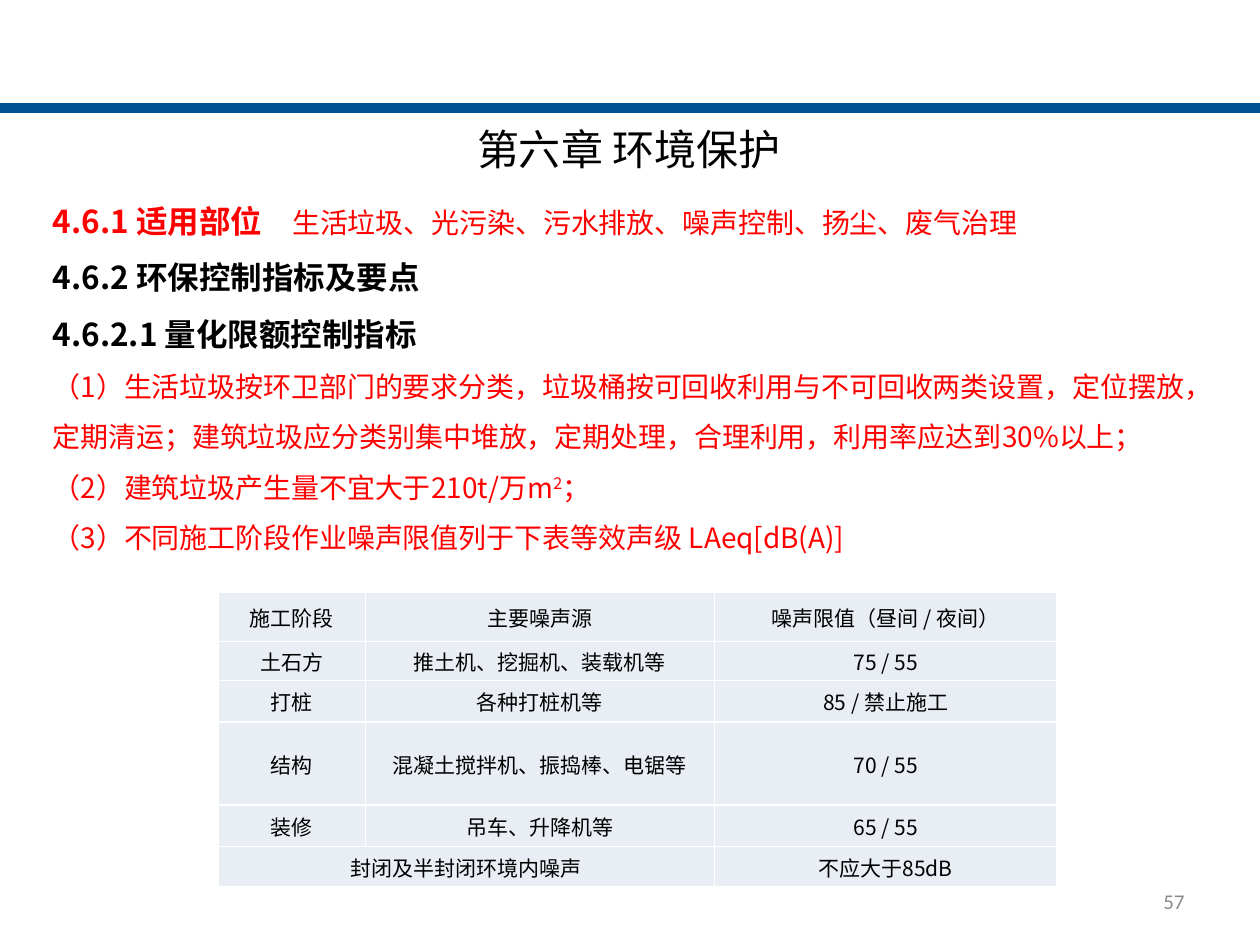
from lxml.etree import SubElement
from pptx import Presentation
from pptx.dml.color import RGBColor as RGB
from pptx.enum.shapes import MSO_SHAPE as Shape
from pptx.enum.text import MSO_ANCHOR as Anchor, PP_ALIGN as Align
from pptx.oxml import parse_xml
from pptx.oxml.ns import nsdecls, qn
from pptx.util import Emu, Inches, Pt

# Content
COLORS = {"bar": "005292", "red": "FF0000", "black": "000000",
          "grey": "8C8C8C", "cell": "E9EDF4", "white": "FFFFFF"}
CJK, LATIN = "Noto Sans CJK SC", "Calibri"
TITLE = "第六章 环境保护"
PAGE_NUMBER = "57"

# Run styles: size, colour, bold, baseline
STYLES = {
    "title": (24, "black", False, 0),
    "key": (18, "red", True, 0),
    "head": (18, "black", True, 0),
    "body": (16, "red", False, 0),
    "super": (16, "red", False, 30000),
    "cell": (12, "black", False, 0),
    "number": (12, "grey", False, 0),
}
PARAGRAPHS = [
    [("4.6.1 适用部位\t", "key"),
     ("生活垃圾、光污染、污水排放、噪声控制、扬尘、废气治理", "body")],
    [("4.6.2 环保控制指标及要点", "head")],
    [("4.6.2.1 量化限额控制指标", "head")],
    [("（1）生活垃圾按环卫部门的要求分类，垃圾桶按可回收利用与不可回收两类设置，"
      "定位摆放，定期清运；建筑垃圾应分类别集中堆放，定期处理，合理利用，"
      "利用率应达到30%以上；", "body")],
    [("（2）建筑垃圾产生量不宜大于210t/万m", "body"), ("2", "super"), ("；", "body")],
    [("（3）不同施工阶段作业噪声限值列于下表等效声级 LAeq[dB(A)]", "body")],
]
NOISE_LIMITS = [
    ("施工阶段", "主要噪声源", "噪声限值（昼间 / 夜间）"),
    ("土石方", "推土机、挖掘机、装载机等", "75 / 55"),
    ("打桩", "各种打桩机等", "85 / 禁止施工"),
    ("结构", "混凝土搅拌机、振捣棒、电锯等", "70 / 55"),
    ("装修", "吊车、升降机等", "65 / 55"),
    ("封闭及半封闭环境内噪声", None, "不应大于85dB"),
]

# Layout in inches
WIDTH, HEIGHT = 10, 7.5
BAR = (0, 0.83, WIDTH, 0.05)
TITLE_AREA = (0.49, 0.93, 9, 0.5)
BODY_AREA = (0.32, 1.4, 9.48, 3.08)
NUMBER_AREA = (7.17, 6.95, 2.33, 0.4)
TABLE_LEFT, TABLE_TOP = 1.73, 4.7
COLUMNS = (1.17, 2.77, 2.72)
ROWS = (0.39, 0.31, 0.33, 0.66, 0.33, 0.32)
TAB_STOP = 1.9


def color(name):
    return RGB.from_string(COLORS[name])


def add_span(para, text, style, font=CJK):
    size, tint, bold, baseline = STYLES[style]
    span = para.add_run()
    span.text = text
    span.font.size, span.font.bold = Pt(size), bold
    span.font.color.rgb = color(tint)
    span.font.name = font
    props = span.font._element
    SubElement(props, qn("a:ea"), typeface=font)
    if baseline:
        props.set("baseline", str(baseline))


def add_box(page, area, anchor=Anchor.TOP):
    frame = page.shapes.add_textbox(*map(Inches, area)).text_frame
    frame.word_wrap = True
    frame.vertical_anchor = anchor
    return frame


def add_line(page, area, text, style, align, font=CJK):
    para = add_box(page, area, Anchor.MIDDLE).paragraphs[0]
    para.alignment = align
    add_span(para, text, style, font)


def add_body(page):
    frame = add_box(page, BODY_AREA)
    for index, spans in enumerate(PARAGRAPHS):
        para = frame.add_paragraph() if index else frame.paragraphs[0]
        para.line_spacing = 1.5
        if any("\t" in text for text, _ in spans):
            tabs = SubElement(para._p.get_or_add_pPr(), qn("a:tabLst"))
            SubElement(tabs, qn("a:tab"), pos=str(Inches(TAB_STOP)), algn="l")
        for text, style in spans:
            add_span(para, text, style)


def style_cell(cell):
    cell.fill.solid()
    cell.fill.fore_color.rgb = color("cell")
    cell.vertical_anchor = Anchor.MIDDLE
    cell.margin_left = cell.margin_top = cell.margin_right = Inches(0.01)
    cell.margin_bottom = 0
    for place, side in enumerate("LRTB"):
        border = parse_xml(
            f'<a:ln{side} {nsdecls("a")} w="{Pt(1)}"><a:solidFill>'
            f'<a:srgbClr val="{COLORS["white"]}"/></a:solidFill></a:ln{side}>')
        cell._tc.get_or_add_tcPr().insert(place, border)


def add_noise_table(page):
    area = (TABLE_LEFT, TABLE_TOP, sum(COLUMNS), sum(ROWS))
    table = page.shapes.add_table(len(ROWS), len(COLUMNS), *map(Inches, area)).table
    table.first_row = table.horz_banding = False
    for column, width in zip(table.columns, COLUMNS):
        column.width = Inches(width)
    for row, height in zip(table.rows, ROWS):
        row.height = Inches(height)
    for r, texts in enumerate(NOISE_LIMITS):
        for c, text in enumerate(texts):
            cell = table.cell(r, c)
            style_cell(cell)
            if text is None:
                table.cell(r, c - 1).merge(cell)
                continue
            para = cell.text_frame.paragraphs[0]
            para.alignment = Align.CENTER
            add_span(para, text, "cell")


def main():
    deck = Presentation()
    deck.slide_width, deck.slide_height = Inches(WIDTH), Inches(HEIGHT)
    page = deck.slides.add_slide(deck.slide_layouts[6])

    # Header bar
    bar = page.shapes.add_shape(Shape.RECTANGLE, *map(Inches, BAR))
    bar.shadow.inherit = False
    bar.fill.solid()
    bar.fill.fore_color.rgb = bar.line.color.rgb = color("bar")
    bar.line.width = Pt(2)

    # Text, table and page number
    add_body(page)
    add_line(page, NUMBER_AREA, PAGE_NUMBER, "number", Align.RIGHT, LATIN)
    add_line(page, TITLE_AREA, TITLE, "title", Align.CENTER)
    add_noise_table(page)
    deck.save("out.pptx")


if __name__ == "__main__":
    main()
